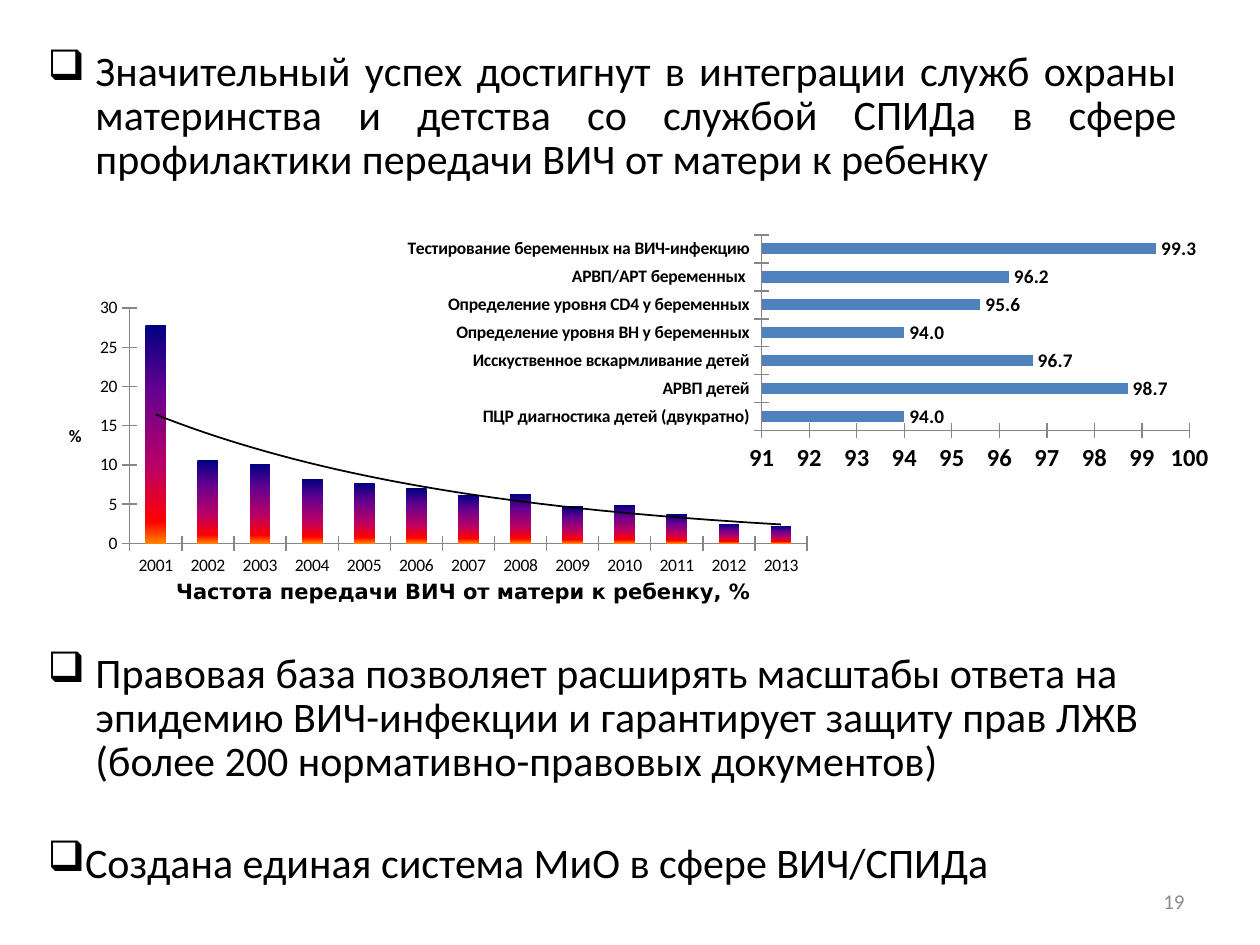
import lxml.etree
import pptx
import pptx.chart.data
import pptx.dml.color
import pptx.enum.chart
import pptx.enum.text
import pptx.oxml
import pptx.oxml.ns
import pptx.util
from pptx.util import Inches

BLACK = pptx.dml.color.RGBColor(0x00, 0x00, 0x00)
GRAY = pptx.dml.color.RGBColor(0x8C, 0x8C, 0x8C)
AXIS_GRAY = pptx.dml.color.RGBColor(0x86, 0x86, 0x86)
BLUE = pptx.dml.color.RGBColor(0x4F, 0x81, 0xBD)
GRADIENT = [(0, "000082"), (30, "66008F"), (65, "BA0066"), (90, "FF0000"), (100, "FF8200")]

ALIGN = pptx.enum.text.PP_ALIGN
CHART_TYPE = pptx.enum.chart.XL_CHART_TYPE
NAMESPACES = pptx.oxml.ns.nsdecls("c", "a")

YEARS = [str(year) for year in range(2001, 2014)]
TRANSMISSION = [27.8, 10.6, 10.1, 8.2, 7.7, 7, 6.2, 6.3, 4.7, 4.9, 3.7, 2.5, 2.2]
COVERAGE = {
    "ПЦР диагностика детей (двукратно)": 94,
    "АРВП детей": 98.7,
    "Исскуственное вскармливание детей": 96.7,
    "Определение уровня ВН у беременных": 94,
    "Определение уровня СD4 у беременных": 95.6,
    "АРВП/АРТ беременных ": 96.2,
    "Тестирование беременных на ВИЧ-инфекцию": 99.3,
}


def add_text_box(slide, left, top, width, height, anchor=pptx.enum.text.MSO_ANCHOR.TOP):
    box = slide.shapes.add_textbox(Inches(left), Inches(top), Inches(width), Inches(height))
    frame = box.text_frame
    frame.word_wrap = True
    frame.vertical_anchor = anchor
    return frame


def write_text(frame, text, size=24, font="Calibri", color=BLACK, bold=False,
               align=ALIGN.LEFT, bullet=False, margin=0, indent=0,
               line_spacing=None, space_before=0):
    paragraph = frame.paragraphs[0]
    if paragraph.runs:
        paragraph = frame.add_paragraph()
    paragraph.alignment = align
    paragraph.space_before = pptx.util.Pt(space_before)
    if line_spacing:
        paragraph.line_spacing = pptx.util.Pt(line_spacing)
    run = paragraph.add_run()
    run.text = text
    format_font(run.font, size, bold, color, font)
    properties = paragraph._p.get_or_add_pPr()
    properties.set("marL", str(Inches(margin)))
    properties.set("indent", str(Inches(indent)))
    if bullet:
        mark = lxml.etree.SubElement(properties, pptx.oxml.ns.qn("a:buChar"))
        mark.set("char", "❑")


def format_font(font, size, bold=False, color=BLACK, name="Calibri"):
    font.size = pptx.util.Pt(size)
    font.bold = bold
    font.name = name
    font.color.rgb = color


def format_axis(axis, size, bold):
    axis.has_major_gridlines = False
    axis.major_tick_mark = pptx.enum.chart.XL_TICK_MARK.CROSS
    axis.minor_tick_mark = pptx.enum.chart.XL_TICK_MARK.NONE
    axis.format.line.color.rgb = AXIS_GRAY
    axis.format.line.width = pptx.util.Pt(0.75)
    format_font(axis.tick_labels.font, size, bold)


def place_plot(chart, x, y, width, height):
    modes = '<c:layoutTarget val="inner"/><c:xMode val="edge"/><c:yMode val="edge"/>'
    bounds = "".join(f'<c:{name} val="{value}"/>' for name, value in
                     (("x", x), ("y", y), ("w", width), ("h", height)))
    layout = pptx.oxml.parse_xml(
        f"<c:layout {NAMESPACES}><c:manualLayout>{modes}{bounds}</c:manualLayout></c:layout>")
    plot_area = chart.element.xpath(".//c:plotArea")[0]
    for previous in plot_area.xpath("./c:layout"):
        plot_area.remove(previous)
    plot_area.insert(0, layout)


def add_bar_chart(slide, kind, bounds, categories, values, scale, plot_bounds,
                  size, category_size, bold=False):
    data = pptx.chart.data.CategoryChartData()
    data.categories = categories
    data.add_series("Series 1", values)
    chart = slide.shapes.add_chart(kind, *map(Inches, bounds), data).chart
    chart.has_legend = False
    chart.has_title = False
    format_font(chart.font, size, bold)
    plot = chart.plots[0]
    plot.gap_width = 150
    plot.vary_by_categories = False
    format_axis(chart.category_axis, category_size, bold)
    format_axis(chart.value_axis, size, bold)
    axis = chart.value_axis
    axis.minimum_scale, axis.maximum_scale, axis.major_unit = scale
    axis.tick_labels.number_format = "0"
    axis.tick_labels.number_format_is_linked = False
    place_plot(chart, *plot_bounds)
    return chart


def fill_with_gradient(series):
    stops = "".join(f'<a:gs pos="{position * 1000}"><a:srgbClr val="{color}"/></a:gs>'
                    for position, color in GRADIENT)
    series.format.fill.gradient()
    gradient = series._element.xpath("./c:spPr/a:gradFill")[0]
    gradient.getparent().replace(gradient, pptx.oxml.parse_xml(
        f'<a:gradFill {NAMESPACES} rotWithShape="1"><a:gsLst>{stops}</a:gsLst>'
        '<a:lin ang="5400000" scaled="0"/></a:gradFill>'))


def add_exponential_trend(series):
    trend = pptx.oxml.parse_xml(
        f'<c:trendline {NAMESPACES}><c:spPr><a:ln w="12700"><a:solidFill>'
        f'<a:srgbClr val="{BLACK}"/></a:solidFill></a:ln></c:spPr>'
        '<c:trendlineType val="exp"/><c:dispRSqr val="0"/><c:dispEq val="0"/></c:trendline>')
    series._element.xpath("./c:cat")[0].addprevious(trend)


def add_transmission_chart(slide):
    chart = add_bar_chart(slide, CHART_TYPE.COLUMN_CLUSTERED, (0.35, 2.33, 6.18, 2.28),
                          YEARS, TRANSMISSION, (0, 30, 5), (0.11, 0.05, 0.87, 0.82), 10, 10)
    series = chart.plots[0].series[0]
    fill_with_gradient(series)
    add_exponential_trend(series)
    title = chart.value_axis.axis_title
    write_text(title.text_frame, "%", size=10, bold=True, align=ALIGN.CENTER)
    title.element.xpath(".//a:bodyPr")[0].set("rot", "0")


def add_coverage_chart(slide):
    chart = add_bar_chart(slide, CHART_TYPE.BAR_CLUSTERED, (2.72, 1.78, 6.93, 2.13),
                          list(COVERAGE), list(COVERAGE.values()), (91, 100, 1),
                          (0.48, 0.04, 0.49, 0.73), 14, 10, bold=True)
    series = chart.plots[0].series[0]
    series.format.fill.solid()
    series.format.fill.fore_color.rgb = BLUE
    labels = series.data_labels
    labels.show_value = True
    labels.number_format = "0.0"
    labels.number_format_is_linked = False
    labels.position = pptx.enum.chart.XL_LABEL_POSITION.OUTSIDE_END
    format_font(labels.font, 11, True)


def main():
    presentation = pptx.Presentation()
    presentation.slide_width = Inches(10)
    presentation.slide_height = Inches(7.5)
    slide = presentation.slides.add_slide(presentation.slide_layouts[6])

    number = add_text_box(slide, 7.17, 6.95, 2.33, 0.4, pptx.enum.text.MSO_ANCHOR.MIDDLE)
    write_text(number, "19", size=12, color=GRAY, align=ALIGN.RIGHT)

    body = add_text_box(slide, 0.28, 0.36, 9.16, 6.05)
    write_text(body, "Значительный успех достигнут в интеграции служб охраны материнства и детства "
               "со службой СПИДа в сфере профилактики передачи ВИЧ от матери к ребенку",
               align=ALIGN.JUSTIFY, bullet=True, margin=0.38, indent=-0.38, line_spacing=25)
    write_text(body, "Правовая база позволяет расширять масштабы ответа на эпидемию ВИЧ-инфекции "
               "и гарантирует защиту прав ЛЖВ",
               bullet=True, margin=0.38, indent=-0.38, line_spacing=25, space_before=269)
    write_text(body, "(более 200 нормативно-правовых документов)", margin=0.38, line_spacing=25)

    add_transmission_chart(slide)
    add_coverage_chart(slide)

    caption = add_text_box(slide, 1.3, 4.54, 5, 0.3)
    write_text(caption, "Частота передачи ВИЧ от матери к ребенку, %",
               size=12, font="DejaVu Sans", bold=True)
    monitoring = add_text_box(slide, 0.28, 6.59, 9.72, 0.5)
    write_text(monitoring, "Создана единая система МиО в сфере ВИЧ/СПИДа",
               align=ALIGN.JUSTIFY, bullet=True)

    presentation.save("out.pptx")


if __name__ == "__main__":
    main()
